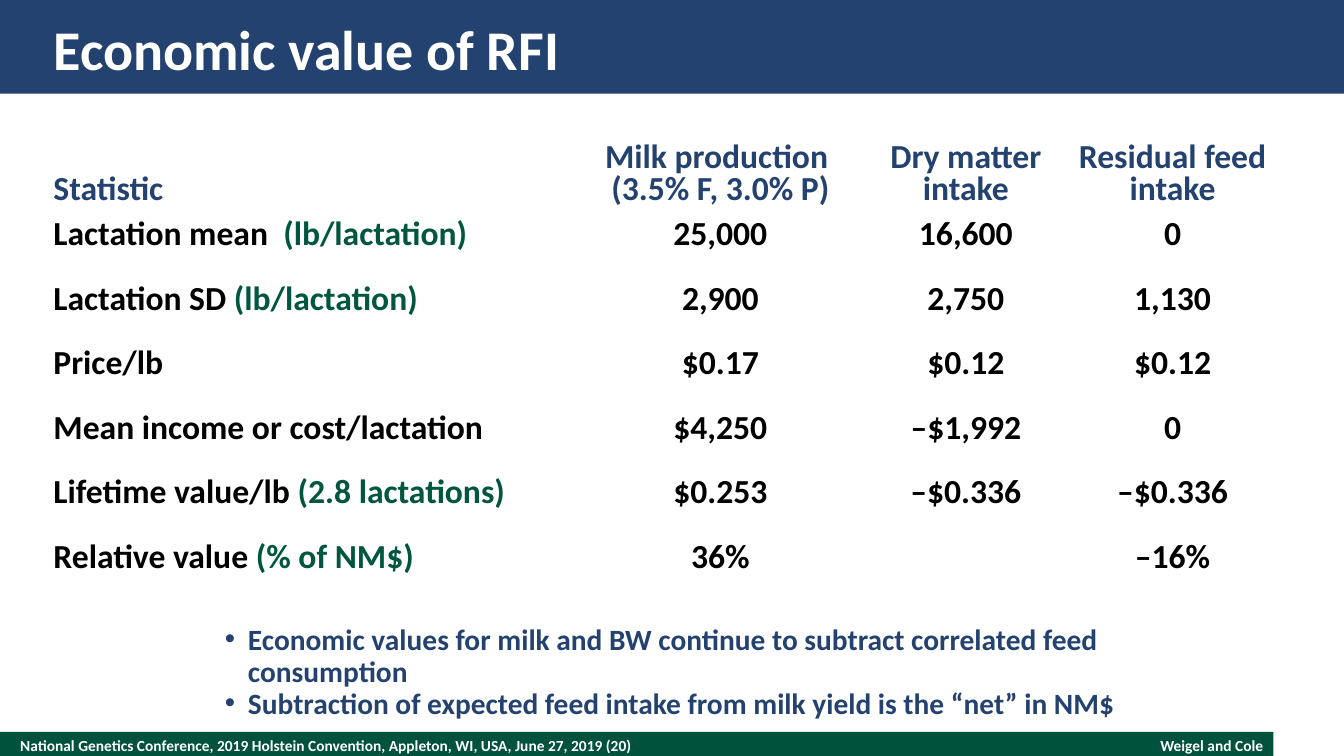
from lxml.etree import SubElement
from pptx import Presentation
from pptx.dml.color import RGBColor
from pptx.enum.shapes import MSO_SHAPE
from pptx.enum.text import MSO_ANCHOR, PP_ALIGN
from pptx.oxml.ns import qn
from pptx.util import Inches, Pt

WIDTH, HEIGHT = 13.33, 7.5
MARGIN = 0.53
NAVY, GREEN, UNIT_GREEN = "244270", "00523C", "00563F"
BLACK, WHITE = "000000", "FFFFFF"

COLUMNS = [5.3, 2.63, 2.24, 1.86]
ROWS = [1.14] + [0.64] * 5 + [0.72]
HEADERS = ["Statistic", "Milk production \n(3.5% F, 3.0% P)",
           "Dry matter intake", "Residual feed intake"]
# Label, unit, then one value for each remaining column
STATISTICS = [
    ("Lactation mean  ", "(lb/lactation)", "25,000", "16,600", "0"),
    ("Lactation SD ", "(lb/lactation)", "2,900", "2,750", "1,130"),
    ("Price/lb", "", "$0.17", "$0.12", "$0.12"),
    ("Mean income or cost/lactation", "", "$4,250", "–$1,992", "0"),
    ("Lifetime value/lb ", "(2.8 lactations)", "$0.253", "–$0.336", "–$0.336"),
    ("Relative value ", "(% of NM$)", "36%", "", "–16%"),
]
NOTES = ("Economic values for milk and BW continue to subtract correlated feed consumption\n"
         "Subtraction of expected feed intake from milk yield is the “net” in NM$")


def color(value):
    return RGBColor.from_string(value)


def inches(box):
    return [Inches(length) for length in box]


def add_run(paragraph, text, size, fill):
    run = paragraph.add_run()
    run.text = text
    run.font.name = "Calibri"
    run.font.size = Pt(size)
    run.font.bold = True
    run.font.color.rgb = color(fill)


def add_bullet(paragraph, indent):
    properties = paragraph._p.get_or_add_pPr()
    properties.set("marL", str(Inches(indent)))
    properties.set("indent", str(-Inches(indent)))
    SubElement(properties, qn("a:buFont"), typeface="Arial")
    SubElement(properties, qn("a:buChar"), char="•")


def write(frame, text, size=24, fill=BLACK, align=PP_ALIGN.LEFT, spacing=None,
          unit="", bullet=False):
    """Write one paragraph for each line; a unit follows in green."""
    frame.word_wrap = True
    for index, line in enumerate(text.split("\n")):
        paragraph = frame.add_paragraph() if index else frame.paragraphs[0]
        if bullet:
            add_bullet(paragraph, 0.23)
        paragraph.alignment = align
        paragraph.space_before = Pt(0)
        if spacing:
            paragraph.line_spacing = Pt(spacing)
        add_run(paragraph, line, size, fill)
        if unit:
            add_run(paragraph, unit, size, UNIT_GREEN)


def clear_margins(holder, bottom=0):
    holder.margin_left = holder.margin_right = holder.margin_top = 0
    holder.margin_bottom = Inches(bottom)


def add_band(slide, box, fill):
    band = slide.shapes.add_shape(MSO_SHAPE.RECTANGLE, *inches(box))
    band.shadow.inherit = False
    band.fill.solid()
    band.fill.fore_color.rgb = color(fill)
    band.line.fill.background()
    return band


def add_text(slide, box, text, anchor=MSO_ANCHOR.MIDDLE, **text_format):
    frame = slide.shapes.add_textbox(*inches(box)).text_frame
    clear_margins(frame)
    frame.vertical_anchor = anchor
    write(frame, text, **text_format)


def add_title(slide, box, text):
    band = add_band(slide, box, NAVY)
    left, top, width, height = box
    title = slide.shapes.title
    title.left, title.top, title.width, title.height = inches(
        (left + MARGIN, top + 0.13, width - 2 * MARGIN, 0.7))
    title.element.addprevious(band.element)  # band lies behind the title
    clear_margins(title.text_frame)
    title.text_frame.vertical_anchor = MSO_ANCHOR.MIDDLE
    write(title.text_frame, text, size=40, fill=WHITE)


def add_footer(slide, box, source, authors):
    left, top, width, height = box
    add_band(slide, box, GREEN)
    add_text(slide, (left + 0.2, top, 8.67, height), source, size=11, fill=WHITE)
    add_text(slide, (left + width - 3.03, top + 0.04, 2.93, 0.19), authors,
             size=11, fill=WHITE, align=PP_ALIGN.RIGHT)


def add_statistics(slide, left, top):
    box = (left, top, sum(COLUMNS), sum(ROWS))
    table = slide.shapes.add_table(len(ROWS), len(COLUMNS), *inches(box)).table
    table.first_row = table.horz_banding = False
    for column, width in zip(table.columns, COLUMNS):
        column.width = Inches(width)
    for row, height in zip(table.rows, ROWS):
        row.height = Inches(height)
    for cell in table.iter_cells():
        cell.fill.background()
        clear_margins(cell)

    # Header row
    for index, header in enumerate(HEADERS):
        cell = table.cell(0, index)
        clear_margins(cell, bottom=0.03)
        cell.vertical_anchor = MSO_ANCHOR.BOTTOM
        write(cell.text_frame, header, fill=NAVY, spacing=23,
              align=PP_ALIGN.CENTER if index else PP_ALIGN.LEFT)

    # Statistic rows
    for row, (label, unit, *values) in enumerate(STATISTICS, 1):
        write(table.cell(row, 0).text_frame, label, unit=unit, spacing=30)
        for column, value in enumerate(values, 1):
            if value:
                write(table.cell(row, column).text_frame, value, spacing=30,
                      align=PP_ALIGN.CENTER)


def main():
    presentation = Presentation()
    presentation.slide_width, presentation.slide_height = inches((WIDTH, HEIGHT))
    slide = presentation.slides.add_slide(presentation.slide_layouts[5])
    add_title(slide, (0, 0, WIDTH, 0.93), "Economic value of RFI")
    add_footer(slide, (0, 7.26, 12.63, 0.27),
               "National Genetics Conference, 2019 Holstein Convention, "
               "Appleton, WI, USA, June 27, 2019 (20)", "Weigel and Cole")
    add_statistics(slide, MARGIN, 0.97)
    add_text(slide, (2.23, 6.19, 8.9, 0.97), NOTES, anchor=MSO_ANCHOR.TOP,
             size=21, fill=NAVY, spacing=23, bullet=True)
    presentation.save("out.pptx")


if __name__ == "__main__":
    main()
